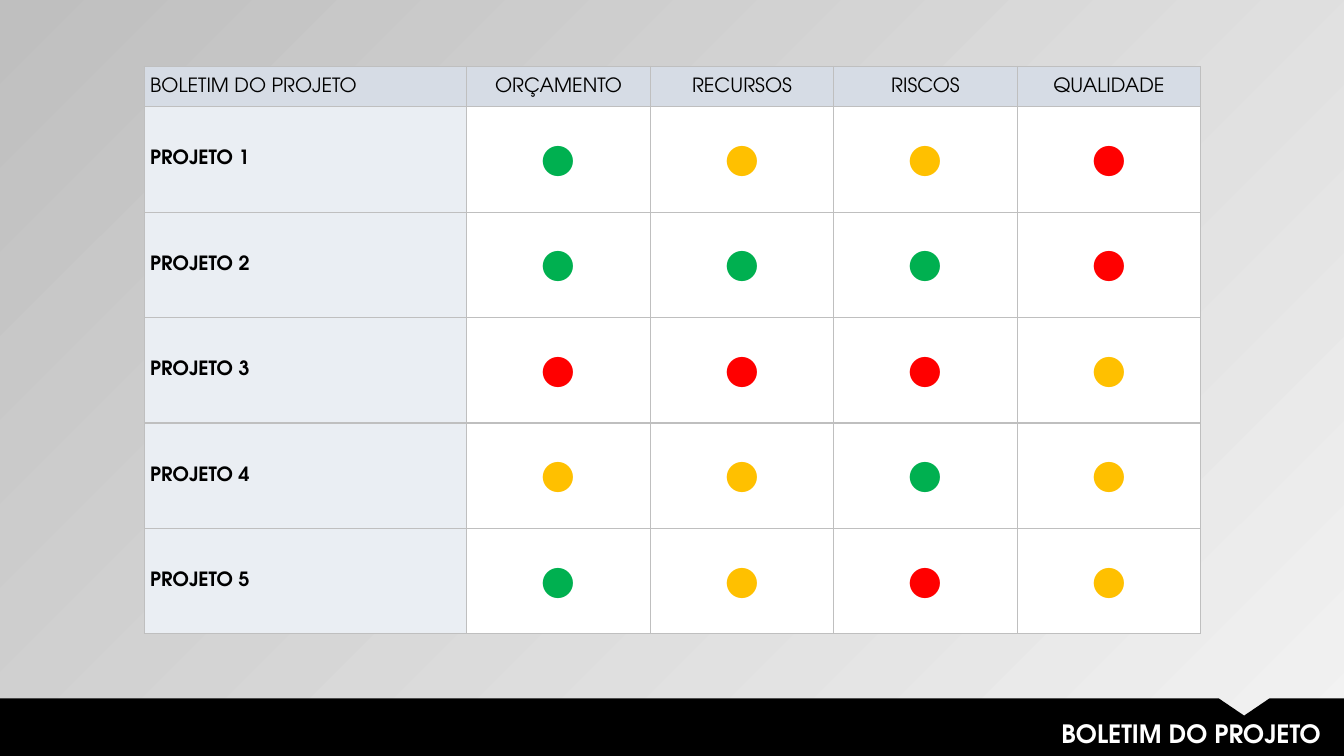
from pptx import Presentation
from pptx.dml.color import RGBColor
from pptx.enum.text import MSO_ANCHOR, PP_ALIGN
from pptx.oxml.ns import qn
from pptx.util import Inches, Pt
from lxml import etree

LEFT, CENTER, RIGHT = PP_ALIGN.LEFT, PP_ALIGN.CENTER, PP_ALIGN.RIGHT
MIDDLE = MSO_ANCHOR.MIDDLE
SLIDE_W, SLIDE_H = 13.33, 7.5
FONT = "TeX Gyre Adventor"
COLORS = {
    "light": "F2F2F2", "grid": "BFBFBF", "black": "000000", "white": "FFFFFF",
    "header": "D6DCE5", "project": "EAEEF3",
    "G": "00B050", "Y": "FFC000", "R": "FF0000",
}
TITLE = "BOLETIM DO PROJETO"
CRITERIA = ["ORÇAMENTO", "RECURSOS", "RISCOS", "QUALIDADE"]
RATINGS = ["GYYR", "GGGR", "RRRY", "YYGY", "GYRY"]


def rgb(name):
    return RGBColor.from_string(COLORS[name])


def write(frame, text, size, color, align, bold=False):
    paragraph = frame.paragraphs[0]
    paragraph.alignment = align
    run = paragraph.add_run()
    run.text = text
    run.font.name = FONT
    run.font.size = Pt(size)
    run.font.bold = bold
    run.font.color.rgb = rgb(color)


def draw_borders(cell):
    properties = cell._tc.get_or_add_tcPr()
    for position, side in enumerate(("a:lnL", "a:lnR", "a:lnT", "a:lnB")):
        border = etree.Element(qn(side), w=str(Pt(1)))
        fill = etree.SubElement(border, qn("a:solidFill"))
        etree.SubElement(fill, qn("a:srgbClr"), val=COLORS["grid"])
        properties.insert(position, border)


def fill_cell(cell, background, text, size, color, align, bold=False):
    cell.fill.solid()
    cell.fill.fore_color.rgb = rgb(background)
    cell.vertical_anchor = MIDDLE
    cell.margin_left = cell.margin_right = Inches(0.06)
    cell.margin_top = cell.margin_bottom = 0
    write(cell.text_frame, text, size, color, align, bold)
    draw_borders(cell)


def paint_background(slide):
    fill = slide.background.fill
    fill.gradient()
    fill.gradient_angle = 135
    for stop, name in zip(fill.gradient_stops, ("light", "grid")):
        stop.color.rgb = rgb(name)


def add_report(slide, left, top, width, height):
    header_height, project_width = 0.4, 3.2
    rows, columns = len(RATINGS) + 1, len(CRITERIA) + 1
    report = slide.shapes.add_table(
        rows, columns, Inches(left), Inches(top), Inches(width), Inches(height)).table
    for index, column in enumerate(report.columns):
        share = (width - project_width) / len(CRITERIA)
        column.width = Inches(share if index else project_width)
    for index, row in enumerate(report.rows):
        share = (height - header_height) / len(RATINGS)
        row.height = Inches(share if index else header_height)

    for column, heading in enumerate([TITLE] + CRITERIA):
        fill_cell(report.cell(0, column), "header", heading, 14, "black",
                  CENTER if column else LEFT)
    for row, ratings in enumerate(RATINGS, 1):
        fill_cell(report.cell(row, 0), "project", f"PROJETO {row}", 14, "black", LEFT, True)
        for column, rating in enumerate(ratings, 1):
            fill_cell(report.cell(row, column), "white", "•", 60, rating, CENTER)


def add_footer(slide, left, top, width, height):
    right, bottom = left + width, top + height
    notch_x, notch_half, notch_depth = right - 0.99, 0.25, 0.17
    outline = [
        (notch_x - notch_half, top), (notch_x, top + notch_depth),
        (notch_x + notch_half, top), (right, top), (right, bottom), (left, bottom),
    ]
    builder = slide.shapes.build_freeform(Inches(left), Inches(top))
    builder.add_line_segments([(Inches(x), Inches(y)) for x, y in outline], close=True)
    band = builder.convert_to_shape()
    band.shadow.inherit = False
    band.fill.solid()
    band.fill.fore_color.rgb = rgb("black")
    band.line.fill.background()

    title_width = 0.68 * width
    title = slide.shapes.add_textbox(
        Inches(right - 0.13 - title_width), Inches(top + 0.15),
        Inches(title_width), Inches(0.4))
    title.text_frame.word_wrap = True
    write(title.text_frame, TITLE, 18, "white", RIGHT, True)


def main():
    deck = Presentation()
    deck.slide_width, deck.slide_height = Inches(SLIDE_W), Inches(SLIDE_H)
    slide = deck.slides.add_slide(deck.slide_layouts[6])
    paint_background(slide)
    add_footer(slide, 0, SLIDE_H - 0.57, SLIDE_W, 0.57)
    add_report(slide, 1.43, 0.66, 10.48, 5.63)
    deck.save("out.pptx")


if __name__ == "__main__":
    main()
